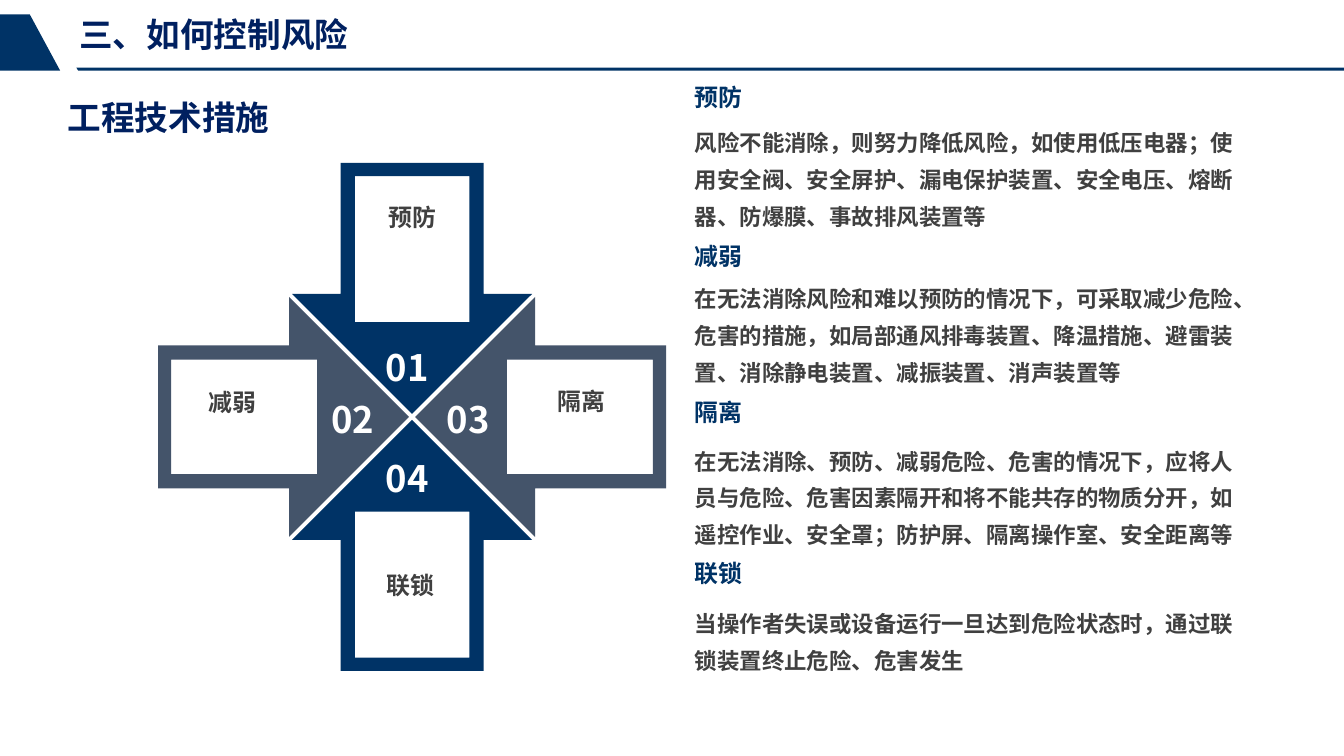
import pptx
import pptx.util
import pptx.dml.color
import pptx.enum.text
import pptx.oxml.ns
from lxml import etree
from pptx.util import Cm, Pt

COLORS = {"navy": "003366", "title": "002060", "slate": "44546A",
          "text": "404040", "white": "FFFFFF"}
CJK_FONT = "Noto Sans CJK SC"
ALIGN = pptx.enum.text.PP_ALIGN

STYLES = {
    "title": {"name": "Arial", "size": Pt(25.3), "bold": True, "color": "title"},
    "label": {"name": CJK_FONT, "size": Pt(18), "bold": True, "color": "text"},
    "number": {"name": CJK_FONT, "size": Pt(27.4), "bold": True, "color": "white"},
    "heading": {"name": CJK_FONT, "size": Pt(18), "bold": True, "color": "navy"},
    "body": {"name": CJK_FONT, "size": Pt(16.9), "bold": True, "color": "text"},
}

# name, direction, color, label offset and number offset from the centre
ARMS = [
    ("预防", (0, -1), "navy", (0, -5.32), (-0.08, -1.33)),
    ("减弱", (-1, 0), "slate", (-4.77, -0.39), (-1.53, 0.07)),
    ("隔离", (1, 0), "slate", (4.5, -0.41), (1.54, 0.07)),
    ("联锁", (0, 1), "navy", (-0.04, 4.46), (-0.08, 1.62)),
]

# heading, heading top, body top, body height, body
MEASURES = [
    ("预防", 0, 0.97, 3.15,
     "风险不能消除，则努力降低风险，如使用低压电器；使用安全阀、安全屏护、漏电保护装置、"
     "安全电压、熔断器、防爆膜、事故排风装置等"),
    ("减弱", 4.22, 5.11, 3.15,
     "在无法消除风险和难以预防的情况下，可采取减少危险、危害的措施，如局部通风排毒装置、"
     "降温措施、避雷装置、消除静电装置、减振装置、消声装置等"),
    ("隔离", 8.36, 9.43, 3.15,
     "在无法消除、预防、减弱危险、危害的情况下，应将人员与危险、危害因素隔开和将不能共存的"
     "物质分开，如遥控作业、安全罩；防护屏、隔离操作室、安全距离等"),
    ("联锁", 12.65, 13.74, 2.13,
     "当操作者失误或设备运行一旦达到危险状态时，通过联锁装置终止危险、危害发生"),
]


def rgb(color):
    return pptx.dml.color.RGBColor.from_string(COLORS[color])


def add_text(slide, text, box, style, wrap=True, inset=True, **paragraph_format):
    frame = slide.shapes.add_textbox(*map(Cm, box)).text_frame
    frame.word_wrap = wrap
    if not inset:
        for side in ("left", "top", "right", "bottom"):
            setattr(frame, f"margin_{side}", 0)
    paragraph = frame.paragraphs[0]
    for key, value in paragraph_format.items():
        setattr(paragraph, key, value)
    run = paragraph.add_run()
    run.text = text
    for key, value in STYLES[style].items():
        if key == "color":
            run.font.color.rgb = rgb(value)
        else:
            setattr(run.font, key, value)
    east_asian = etree.SubElement(run.font._element, pptx.oxml.ns.qn("a:ea"))
    east_asian.set("typeface", CJK_FONT)


def add_outline(slide, contours, color):
    """Fill closed contours given in cm; a contour inside another is a hole."""
    contours = [[(Cm(x), Cm(y)) for x, y in contour] for contour in contours]
    builder = slide.shapes.build_freeform(*contours[0][0], scale=1.0)
    for index, (start, *rest) in enumerate(contours):
        if index:
            builder.move_to(*start)
        builder.add_line_segments(rest, close=True)
    shape = builder.convert_to_shape()
    shape.shadow.inherit = False
    shape.fill.solid()
    shape.fill.fore_color.rgb = rgb(color)
    shape.line.fill.background()


def add_header(slide, left, top, width, height):
    bottom, right = top + height, left + width
    add_outline(slide, [[(left + 2.03, bottom - 0.08), (right, bottom - 0.08),
                         (right, bottom), (left + 2.08, bottom)]], "navy")
    add_outline(slide, [[(left, top), (left + 0.79, top),
                         (left + 1.6, bottom), (left, bottom)]], "navy")
    add_text(slide, "三、如何控制风险", (left + 2.11, top, 11.53, 1.09),
             "title", inset=False, space_after=Pt(6))


def add_arm(slide, center_x, center_y, direction, color):
    """Draw one arm of the cross, pointing away from the centre."""
    dx, dy = direction
    gap = 0.08
    outer = [(0, 0), (3.19, -3.19), (3.19, -1.9), (6.67, -1.9),
             (6.67, 1.9), (3.19, 1.9), (3.19, 3.19)]
    window = [(2.44, -1.52), (2.44, 1.52), (6.32, 1.52), (6.32, -1.52)]
    add_outline(slide, [
        [(center_x + (along + gap) * dx - across * dy,
          center_y + (along + gap) * dy + across * dx) for along, across in contour]
        for contour in (outer, window)], color)


def add_cross(slide, left, top, size):
    center_x, center_y = left + size / 2, top + size / 2

    def centered_box(offset, width, height):
        return (center_x + offset[0] - width / 2,
                center_y + offset[1] - height / 2, width, height)

    for number, (name, direction, color, label_at, number_at) in enumerate(ARMS, 1):
        add_arm(slide, center_x, center_y, direction, color)
        add_text(slide, name, centered_box(label_at, 2.57, 1.02), "label",
                 alignment=ALIGN.CENTER)
        add_text(slide, f"{number:02}", centered_box(number_at, 1.73, 1.42),
                 "number", wrap=False)


def add_measures(slide, left, top, width):
    for name, heading_top, body_top, body_height, body in MEASURES:
        add_text(slide, name, (left, top + heading_top, 1.8, 1.02),
                 "heading", wrap=False)
        add_text(slide, body, (left, top + body_top, width, body_height),
                 "body", line_spacing=Pt(27.7))


def main():
    deck = pptx.Presentation()
    deck.slide_width, deck.slide_height = Cm(35.71), Cm(20.09)
    slide = deck.slides.add_slide(deck.slide_layouts[6])
    add_header(slide, 0, 0.38, 35.71, 1.5)
    add_text(slide, "工程技术措施", (1.8, 2.57, 11.53, 1.09),
             "title", inset=False, space_after=Pt(6))
    add_cross(slide, 4.2, 4.33, 13.5)
    add_measures(slide, 18.21, 2.08, 15.09)
    deck.save("out.pptx")


if __name__ == "__main__":
    main()
